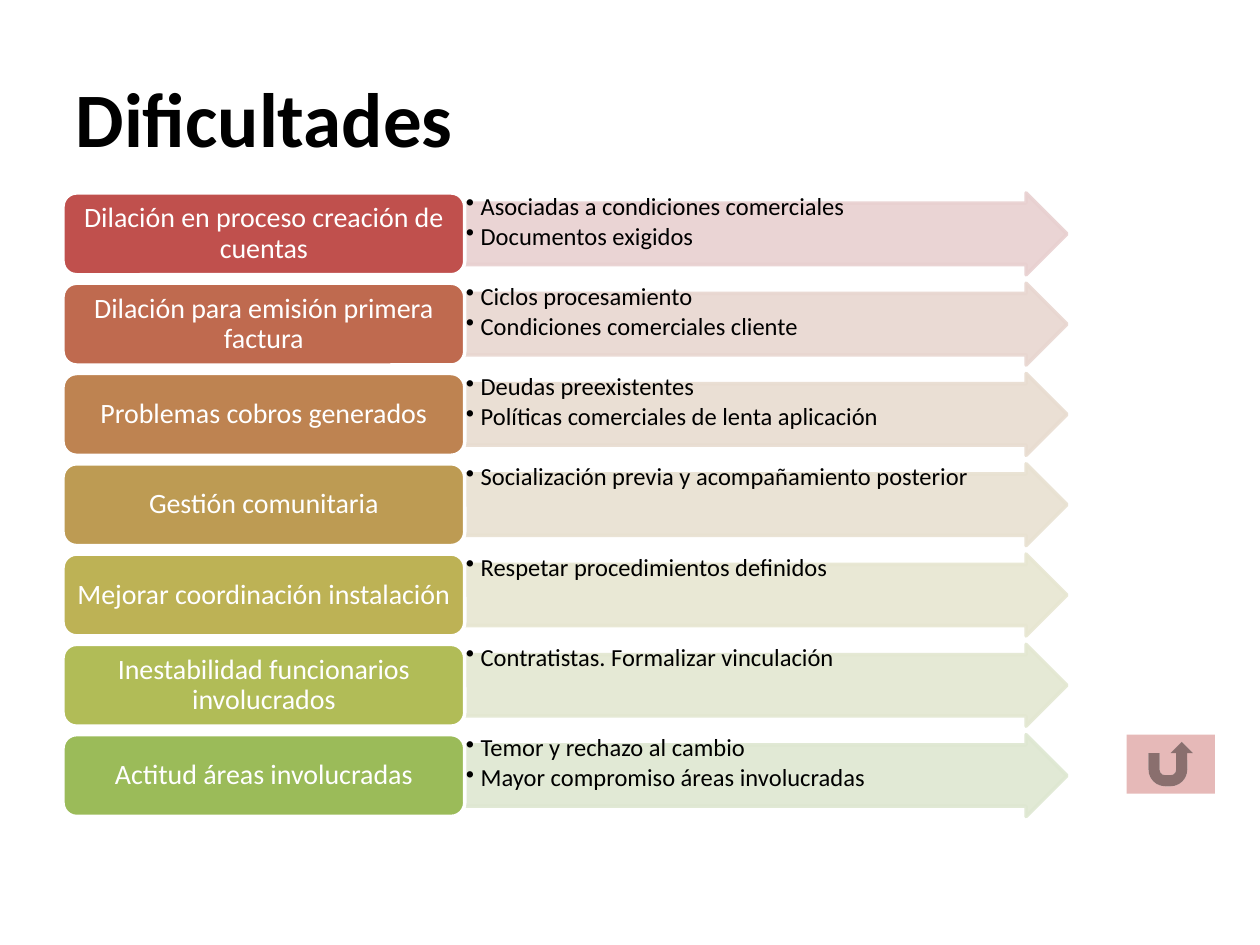
from dataclasses import dataclass

from lxml.etree import SubElement
from pptx import Presentation
from pptx.dml.color import RGBColor
from pptx.enum.shapes import MSO_SHAPE
from pptx.enum.text import MSO_ANCHOR, PP_ALIGN
from pptx.oxml.ns import qn
from pptx.util import Cm, Pt

FONT = "Calibri"
COLORS = {
    "black": "000000", "white": "FFFFFF", "button": "E6B9B8",
    "red": "C0504D", "red_pale": "E8D0D0",
    "rust": "BF6A4F", "rust_pale": "E8D6D0",
    "orange": "BE8351", "orange_pale": "E8DCD0",
    "ochre": "BD9B53", "ochre_pale": "E8E1D1",
    "mustard": "BDB255", "mustard_pale": "E7E6D1",
    "lime": "B1BC57", "lime_pale": "E3E7D1",
    "green": "9BBB59", "green_pale": "DEE7D1",
}
LABEL_LEFT, LABEL_WIDTH = Cm(1.27), Cm(8.1)
ARROW_LEFT, ARROW_WIDTH = LABEL_LEFT + LABEL_WIDTH, Cm(12.14)
FIRST_TOP, ROW_HEIGHT, ROW_PITCH = Cm(3.89), Cm(1.65), Cm(1.82)


@dataclass
class Difficulty:
    label: str
    color: str
    points: list[str]


DIFFICULTIES = [
    Difficulty("Dilación en proceso creación de cuentas", "red",
               ["Asociadas a condiciones comerciales", "Documentos exigidos"]),
    Difficulty("Dilación para emisión primera factura", "rust",
               ["Ciclos procesamiento", "Condiciones comerciales cliente"]),
    Difficulty("Problemas cobros generados", "orange",
               ["Deudas preexistentes", "Políticas comerciales de lenta aplicación"]),
    Difficulty("Gestión comunitaria", "ochre",
               ["Socialización previa y acompañamiento posterior"]),
    Difficulty("Mejorar coordinación instalación", "mustard",
               ["Respetar procedimientos definidos"]),
    Difficulty("Inestabilidad funcionarios involucrados", "lime",
               ["Contratistas. Formalizar vinculación"]),
    Difficulty("Actitud áreas involucradas", "green",
               ["Temor y rechazo al cambio", "Mayor compromiso áreas involucradas"]),
]


def rgb(name: str) -> RGBColor:
    return RGBColor.from_string(COLORS[name])


def style_font(p, size: float, color: str, bold: bool = False) -> None:
    for r in p.runs:
        r.font.name = FONT
        r.font.size = Pt(size)
        r.font.bold = bold
        r.font.color.rgb = rgb(color)


def set_margins(tf, horizontal: Cm, vertical: Cm) -> None:
    tf.word_wrap = True
    tf.margin_left = tf.margin_right = horizontal
    tf.margin_top = tf.margin_bottom = vertical


def add_filled(shapes, kind: MSO_SHAPE, box: tuple, fill: str, line: str | None = None):
    sp = shapes.add_shape(kind, *box)
    sp.shadow.inherit = False
    sp.fill.solid()
    sp.fill.fore_color.rgb = rgb(fill)
    if line:
        sp.line.color.rgb = rgb(line)
        sp.line.width = Pt(2)
    else:
        sp.line.fill.background()
    return sp


def add_arrow(shapes, top: int, color: str) -> None:
    box = (ARROW_LEFT, top, ARROW_WIDTH, ROW_HEIGHT)
    sp = add_filled(shapes, MSO_SHAPE.RIGHT_ARROW, box, color, color)
    sp.adjustments[0] = 0.75
    sp.adjustments[1] = 0.5
    for clr in sp._element.spPr.iter(qn("a:srgbClr")):
        SubElement(clr, qn("a:alpha"), val="90000")


def add_points(shapes, top: int, points: list[str]) -> None:
    tf = shapes.add_textbox(ARROW_LEFT, top, ARROW_WIDTH, ROW_HEIGHT).text_frame
    set_margins(tf, Cm(0.02), Cm(0.02))
    tf.text = "\n".join(points)
    for p in tf.paragraphs:
        p.level = 1
        pPr = p._p.get_or_add_pPr()
        pPr.set("marL", str(Cm(0.3)))
        pPr.set("indent", str(-Cm(0.3)))
        SubElement(pPr, qn("a:buChar"), char="•")
        p.line_spacing = 0.9
        p.space_after = Pt(2.1)
        style_font(p, 14, "black")


def add_label(shapes, top: int, text: str, color: str) -> None:
    box = (LABEL_LEFT, top, LABEL_WIDTH, ROW_HEIGHT)
    sp = add_filled(shapes, MSO_SHAPE.ROUNDED_RECTANGLE, box, color, "white")
    tf = sp.text_frame
    set_margins(tf, Cm(0.1), Cm(0))
    tf.vertical_anchor = MSO_ANCHOR.MIDDLE
    tf.text = text
    p = tf.paragraphs[0]
    p.alignment = PP_ALIGN.CENTER
    p.line_spacing = 0.9
    style_font(p, 16, "white")


def add_title(s, text: str) -> None:
    title = s.shapes.title
    title.left, title.top, title.width, title.height = Cm(1.27), Cm(0.76), Cm(15.44), Cm(3.18)
    tf = title.text_frame
    tf.vertical_anchor = MSO_ANCHOR.MIDDLE
    tf.text = text
    p = tf.paragraphs[0]
    p.alignment = PP_ALIGN.LEFT
    style_font(p, 44, "black", bold=True)


def main() -> None:
    prs = Presentation()
    prs.slide_width, prs.slide_height = Cm(25.4), Cm(19.05)
    s = prs.slides.add_slide(prs.slide_layouts[5])
    add_title(s, "Dificultades")
    shapes = s.shapes.add_group_shape().shapes
    for i, item in enumerate(DIFFICULTIES):
        top = FIRST_TOP + i * ROW_PITCH
        add_arrow(shapes, top, f"{item.color}_pale")
        add_points(shapes, top, item.points)
        add_label(shapes, top, item.label, item.color)
    button_box = (Cm(22.71), Cm(14.81), Cm(1.78), Cm(1.19))
    add_filled(s.shapes, MSO_SHAPE.ACTION_BUTTON_RETURN, button_box, "button")
    prs.save("out.pptx")


if __name__ == "__main__":
    main()
